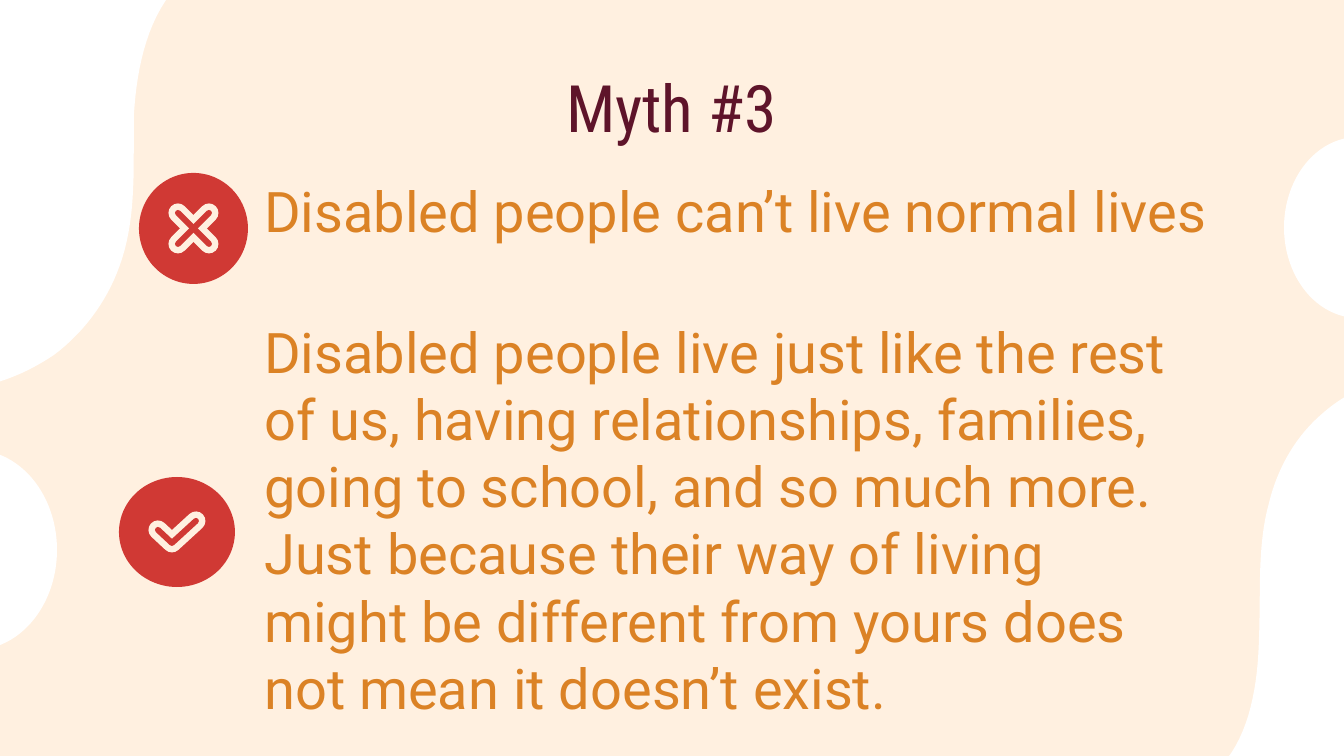
from lxml import etree
from pptx import Presentation
from pptx import util as u
from pptx.dml.color import RGBColor
from pptx.enum import shapes, text
from pptx.oxml import ns

SCALE = 914400 / 134.4
COLORS = {"cream": "FFF0E0", "white": "FFFFFF", "plum": "5E142A",
          "orange": "DB8225", "red": "D03934"}

TITLE = ("Myth #3", (212, 54, 919, 85))
STATEMENTS = [
    ("Disabled people can’t live normal lives", (251, 163, 1013, 126)),
    ("Disabled people live just like the rest of us, having relationships, "
     "families, going to school, and so much more. Just because their way of "
     "living might be different from yours does not mean it doesn’t exist.",
     (251, 304, 938, 434)),
]
BADGES = [
    ((139, 173, 109, 111), [[(178, 213), (209, 244)], [(209, 213), (178, 244)]]),
    ((119, 477, 116, 110), [[(158, 530), (172, 543), (196, 521)]]),
]
MARK_STROKES = [(19, "cream"), (6, "red")]
BUBBLES = [(1284, 137, 148, 181), (-108, 450, 165, 200)]
WAVES = [
    ((-40, -22), (-59, 391), [
        ((-19, 391), (20, 378), (54, 355)),
        ((86, 331), (110, 297), (122, 259)),
        ((137, 212), (133, 163), (134, 114)),
        ((137, 66), (148, 13), (183, -20))]),
    ((1395, 765), (1410, 379), [
        ((1378, 379), (1348, 391), (1323, 413)),
        ((1297, 435), (1278, 466), (1269, 503)),
        ((1257, 546), (1261, 593), (1259, 638)),
        ((1258, 684), (1250, 734), (1222, 765))]),
]


def px(length):
    return u.Emu(round(length * SCALE))


def color(name):
    return RGBColor.from_string(COLORS[name])


def paint(shape, fill):
    shape.shadow.inherit = False
    shape.fill.solid()
    shape.fill.fore_color.rgb = color(fill)
    shape.line.fill.background()


def add_oval(slide, box, fill):
    oval = slide.shapes.add_shape(shapes.MSO_SHAPE.OVAL, *map(px, box))
    paint(oval, fill)


def curve(start, handle_a, handle_b, end, steps=16):
    for step in range(1, steps + 1):
        t = step / steps
        weights = ((1 - t) ** 3, 3 * t * (1 - t) ** 2, 3 * t * t * (1 - t), t ** 3)
        corners = (start, handle_a, handle_b, end)
        yield tuple(sum(w * c[axis] for w, c in zip(weights, corners))
                    for axis in (0, 1))


def add_wave(slide, corner, start, curves):
    outline = [start]
    for handle_a, handle_b, end in curves:
        outline.extend(curve(outline[-1], handle_a, handle_b, end))
    builder = slide.shapes.build_freeform(*map(px, corner))
    builder.add_line_segments([(px(x), px(y)) for x, y in outline], close=True)
    paint(builder.convert_to_shape(), "white")


def add_mark(slide, strokes, width, stroke_color):
    builder = slide.shapes.build_freeform(*map(px, strokes[0][0]))
    for index, stroke in enumerate(strokes):
        if index:
            builder.move_to(*map(px, stroke[0]))
        builder.add_line_segments([(px(x), px(y)) for x, y in stroke[1:]], close=False)
    mark = builder.convert_to_shape()
    mark.shadow.inherit = False
    mark.fill.background()
    mark.line.color.rgb = color(stroke_color)
    mark.line.width = px(width)
    outline = mark.line.fill._xPr
    outline.set("cap", "rnd")
    etree.SubElement(outline, ns.qn("a:round"))


def add_text(slide, words, box, *, font, size, ink, align=text.PP_ALIGN.LEFT):
    frame = slide.shapes.add_textbox(*map(px, box)).text_frame
    frame.word_wrap = True
    frame.margin_left = frame.margin_right = u.Inches(0.1)
    frame.margin_top = frame.margin_bottom = u.Inches(0.1)
    paragraph = frame.paragraphs[0]
    paragraph.alignment = align
    run = paragraph.add_run()
    run.text = words
    run.font.name = font
    run.font.size = u.Pt(size)
    run.font.color.rgb = color(ink)


def main():
    deck = Presentation()
    deck.slide_width, deck.slide_height = px(1344), px(756)
    slide = deck.slides.add_slide(deck.slide_layouts[6])
    slide.background.fill.solid()
    slide.background.fill.fore_color.rgb = color("cream")

    for wave in WAVES:
        add_wave(slide, *wave)
    for bubble in BUBBLES:
        add_oval(slide, bubble, "white")

    add_text(slide, *TITLE, font="Roboto Condensed", size=35, ink="plum",
             align=text.PP_ALIGN.CENTER)
    for statement in STATEMENTS:
        add_text(slide, *statement, font="Roboto", size=30, ink="orange")

    for disc, strokes in BADGES:
        add_oval(slide, disc, "red")
        for width, stroke_color in MARK_STROKES:
            add_mark(slide, strokes, width, stroke_color)

    deck.save("out.pptx")


if __name__ == "__main__":
    main()
